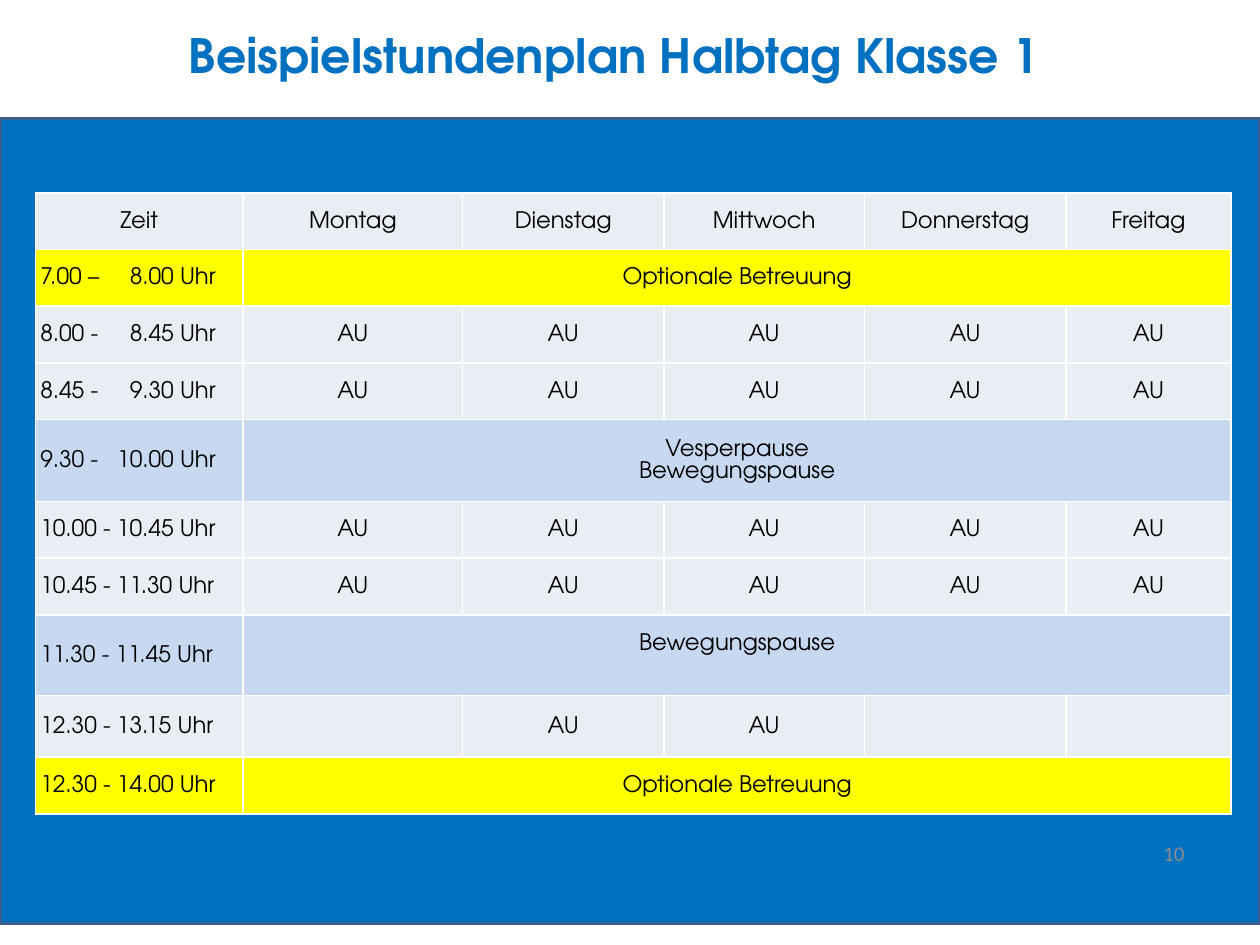
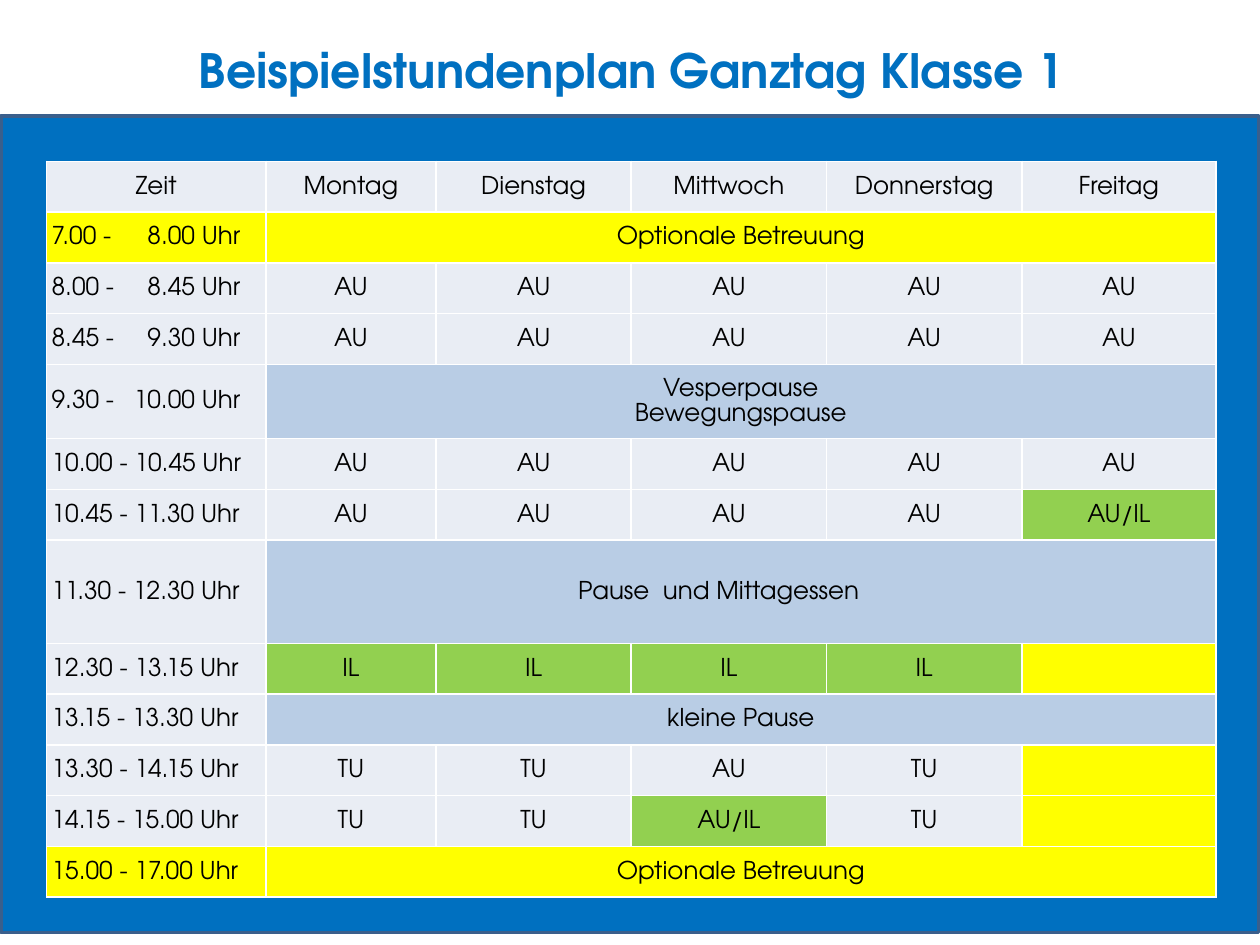
import pptx
import pptx.dml.color
import pptx.enum.shapes
import pptx.enum.text
import pptx.oxml
import pptx.oxml.ns
import pptx.util
from lxml import etree

RGBColor = pptx.dml.color.RGBColor
Inches = pptx.util.Inches
Pt = pptx.util.Pt
ALIGN = pptx.enum.text.PP_ALIGN
MIDDLE = pptx.enum.text.MSO_ANCHOR.MIDDLE

BLUE = RGBColor(0x00, 0x70, 0xC0)
OUTLINE = RGBColor(0x3A, 0x5F, 0x8C)
BLACK = RGBColor(0x00, 0x00, 0x00)
GRAY = RGBColor(0x8C, 0x8C, 0x8C)
PLAIN = RGBColor(0xE9, 0xED, 0xF4)
CARE = RGBColor(0xFF, 0xFF, 0x00)
LEARNING = RGBColor(0x92, 0xD0, 0x50)
LIGHT_BREAK = RGBColor(0xC6, 0xD9, 0xF1)
DARK_BREAK = RGBColor(0xB9, 0xCD, 0xE5)

FONT = "TeX Gyre Adventor"
NUMBER_FONT = "Calibri"
CELL_INSET = 0.04
TAB_PER_POINT = 0.107

HEADER = ("Zeit", ["Montag", "Dienstag", "Mittwoch", "Donnerstag", "Freitag"])
ALL_AU = ["AU"] * 5
OPTIONAL_CARE = "Optionale Betreuung"
SNACK_BREAK = "Vesperpause\nBewegungspause"

PLANS = [
    {
        "title": "Beispielstundenplan Halbtag Klasse 1",
        "title_box": (-0.01, -0.64, 9.76, 1.8),
        "title_top_inset": 0.39,
        "band": (0, 0.94, 10, 6.39),
        "number": "10",
        "corner": (0.28, 1.53),
        "columns": [1.65, 1.74, 1.6, 1.59, 1.6, 1.31],
        "row_height": 0.45,
        "tall_rows": {4: 0.65, 7: 0.64, 8: 0.49},
        "size": 13,
        "break_fill": LIGHT_BREAK,
        "break_time_fill": LIGHT_BREAK,
        "free_fill": PLAIN,
        "insets": {"Bewegungspause": {"margin_bottom": 0.18}},
        "rows": [
            HEADER,
            ("7.00 –\t8.00 Uhr", OPTIONAL_CARE),
            ("8.00 -\t8.45 Uhr", ALL_AU),
            ("8.45 -\t9.30 Uhr", ALL_AU),
            ("9.30 -\t10.00 Uhr", SNACK_BREAK),
            ("10.00 - 10.45 Uhr", ALL_AU),
            ("10.45 - 11.30 Uhr", ALL_AU),
            ("11.30 - 11.45 Uhr", "Bewegungspause"),
            ("12.30 - 13.15 Uhr", ["", "AU", "AU", "", ""]),
            ("12.30 - 14.00 Uhr", OPTIONAL_CARE),
        ],
    },
    {
        "title": "Beispielstundenplan Ganztag Klasse 1",
        "title_box": (0.01, -0.07, 10, 1.25),
        "title_top_inset": 0.05,
        "band": (0.01, 0.92, 9.98, 6.48),
        "number": "",
        "corner": (0.37, 1.28),
        "columns": [1.74, 1.35, 1.55, 1.55, 1.55, 1.54],
        "row_height": 0.403,
        "tall_rows": {4: 0.59, 7: 0.82},
        "size": 14,
        "break_fill": DARK_BREAK,
        "break_time_fill": PLAIN,
        "free_fill": CARE,
        "insets": {"Pause  und Mittagessen": {"margin_right": 0.39}},
        "rows": [
            HEADER,
            ("7.00 -\t8.00 Uhr", OPTIONAL_CARE),
            ("8.00 -\t8.45 Uhr", ALL_AU),
            ("8.45 -\t9.30 Uhr", ALL_AU),
            ("9.30 -\t10.00 Uhr", SNACK_BREAK),
            ("10.00 - 10.45 Uhr", ALL_AU),
            ("10.45 - 11.30 Uhr", ["AU"] * 4 + ["AU/IL"]),
            ("11.30 - 12.30 Uhr", "Pause  und Mittagessen"),
            ("12.30 - 13.15 Uhr", ["IL"] * 4 + [""]),
            ("13.15 - 13.30 Uhr", "kleine Pause"),
            ("13.30 - 14.15 Uhr", ["TU", "TU", "AU", "TU", ""]),
            ("14.15 - 15.00 Uhr", ["TU", "TU", "AU/IL", "TU", ""]),
            ("15.00 - 17.00 Uhr", OPTIONAL_CARE),
        ],
    },
]


def add_run(paragraph, text, size, color, font=FONT, bold=False):
    run = paragraph.add_run()
    run.text = text
    run.font.name = font
    run.font.size = Pt(size)
    run.font.bold = bold
    run.font.color.rgb = color


def add_text(slide, box, text, size, color, alignment, top_inset=0.05, **style):
    shape = slide.shapes.add_textbox(*map(Inches, box))
    frame = shape.text_frame
    frame.word_wrap = True
    frame.vertical_anchor = MIDDLE
    frame.margin_top = Inches(top_inset)
    paragraph = frame.paragraphs[0]
    paragraph.alignment = alignment
    add_run(paragraph, text, size, color, **style)


def add_band(slide, box):
    shape = slide.shapes.add_shape(
        pptx.enum.shapes.MSO_SHAPE.RECTANGLE, *map(Inches, box))
    shape.shadow.inherit = False
    shape.fill.solid()
    shape.fill.fore_color.rgb = BLUE
    shape.line.color.rgb = OUTLINE
    shape.line.width = Pt(2)


def add_borders(cell):
    properties = cell._tc.get_or_add_tcPr()
    for side in ("lnL", "lnR", "lnT", "lnB"):
        properties.append(pptx.oxml.parse_xml(
            f'<a:{side} {pptx.oxml.ns.nsdecls("a")} w="12700"><a:solidFill>'
            f'<a:srgbClr val="FFFFFF"/></a:solidFill></a:{side}>'))


def add_right_tab(paragraph, position):
    qn = pptx.oxml.ns.qn
    tabs = etree.SubElement(paragraph._p.get_or_add_pPr(), qn("a:tabLst"))
    etree.SubElement(tabs, qn("a:tab"), pos=str(Inches(position)), algn="r")


def format_cell(cell, fill):
    add_borders(cell)
    cell.fill.solid()
    cell.fill.fore_color.rgb = fill
    cell.vertical_anchor = MIDDLE
    cell.margin_left = cell.margin_right = Inches(CELL_INSET)
    cell.margin_top = cell.margin_bottom = 0


def write_cell(cell, text, size, alignment):
    for index, line in enumerate(text.split("\n") if text else []):
        frame = cell.text_frame
        paragraph = frame.add_paragraph() if index else frame.paragraphs[0]
        paragraph.alignment = alignment
        paragraph.line_spacing = 1.07
        if "\t" in line:
            add_right_tab(paragraph, TAB_PER_POINT * size)
        add_run(paragraph, line, size, BLACK)


def row_fills(plan, content):
    if content == OPTIONAL_CARE:
        return [CARE] * 6
    if isinstance(content, str):
        return [plan["break_time_fill"]] + [plan["break_fill"]] * 5
    return [PLAIN] + [
        plan["free_fill"] if not lesson else LEARNING if "IL" in lesson else PLAIN
        for lesson in content]


def add_timetable(slide, plan):
    rows, columns = plan["rows"], plan["columns"]
    heights = [plan["tall_rows"].get(index, plan["row_height"])
               for index in range(len(rows))]
    box = (*plan["corner"], sum(columns), sum(heights))
    table = slide.shapes.add_table(
        len(rows), len(columns), *map(Inches, box)).table
    table.first_row = table.horz_banding = False
    for column, width in zip(table.columns, columns):
        column.width = Inches(width)
    for index, (time, content) in enumerate(rows):
        table.rows[index].height = Inches(heights[index])
        cells = list(table.rows[index].cells)
        for cell, fill in zip(cells, row_fills(plan, content)):
            format_cell(cell, fill)
        write_cell(cells[0], time, plan["size"],
                   ALIGN.LEFT if index else ALIGN.CENTER)
        if isinstance(content, str):
            cells[1].merge(cells[-1])
            for margin, inset in plan["insets"].get(content, {}).items():
                setattr(cells[1], margin, Inches(inset))
            content = [content]
        for cell, text in zip(cells[1:], content):
            write_cell(cell, text, plan["size"], ALIGN.CENTER)


def main():
    presentation = pptx.Presentation()
    presentation.slide_width = Inches(10)
    presentation.slide_height = Inches(7.5)
    for plan in PLANS:
        slide = presentation.slides.add_slide(presentation.slide_layouts[6])
        add_band(slide, plan["band"])
        add_text(slide, plan["title_box"], plan["title"], 27, BLUE, ALIGN.CENTER,
                 plan["title_top_inset"], bold=True)
        if plan["number"]:
            add_text(slide, (7.17, 6.57, 2.33, 0.4), plan["number"], 12, GRAY,
                     ALIGN.RIGHT, font=NUMBER_FONT)
        add_timetable(slide, plan)
    presentation.save("out.pptx")


if __name__ == "__main__":
    main()
